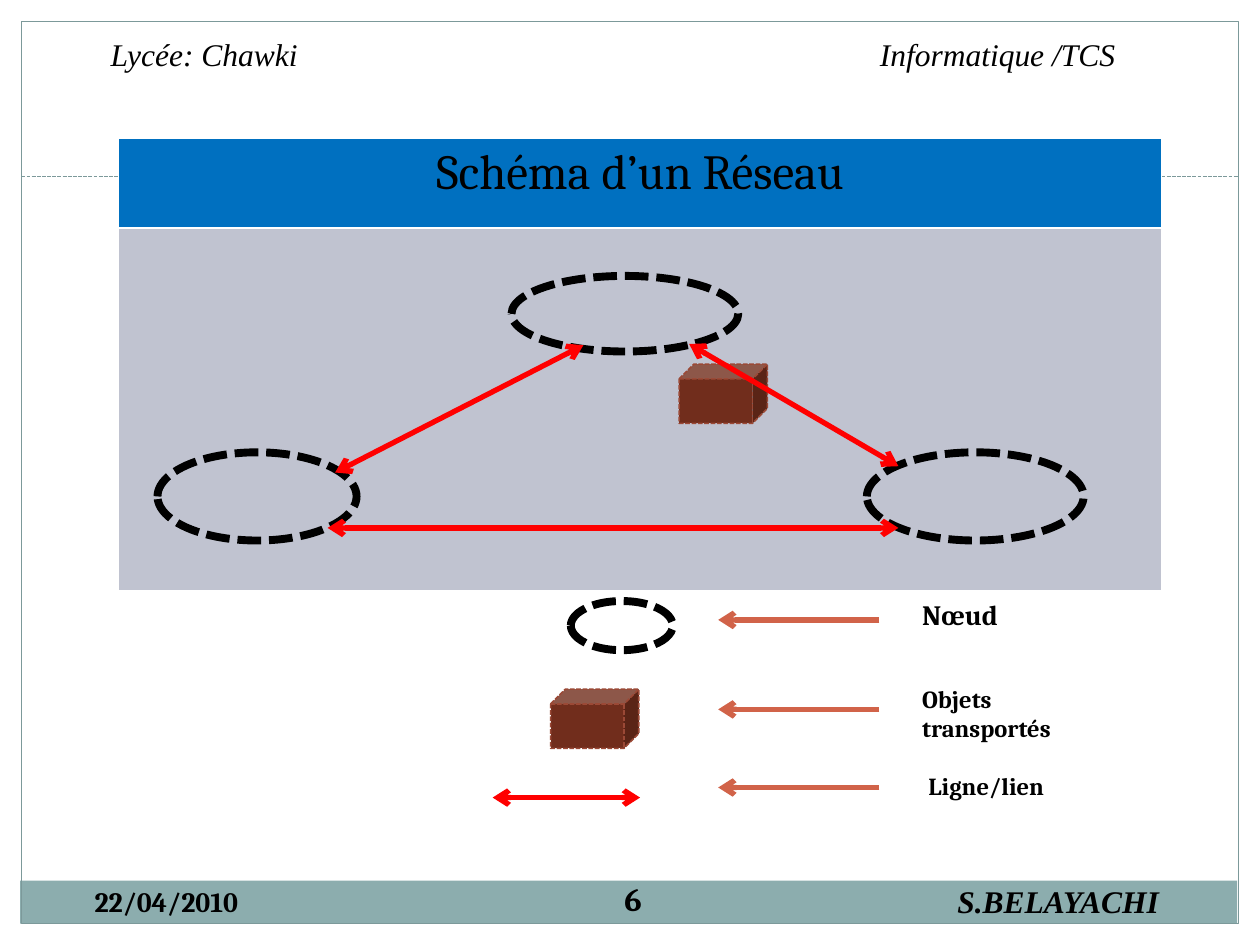
from typing import NamedTuple

from lxml import etree
from pptx import Presentation
from pptx import util as u
from pptx.dml.color import RGBColor
from pptx.enum import dml, shapes, text
from pptx.oxml import ns

BLACK = RGBColor(0x00, 0x00, 0x00)
WHITE = RGBColor(0xFF, 0xFF, 0xFF)
TEAL = RGBColor(0x8C, 0xAD, 0xAE)
TEAL_DARK = RGBColor(0x7C, 0x99, 0x9A)
BLUE = RGBColor(0x00, 0x70, 0xC0)
GREY = RGBColor(0xC0, 0xC3, 0xD0)
BROWN = RGBColor(0x71, 0x2D, 0x1C)
RUST = RGBColor(0x9B, 0x49, 0x36)
RED = RGBColor(0xFF, 0x00, 0x00)
ORANGE = RGBColor(0xD1, 0x63, 0x49)

SERIF = "Cambria"
ROMAN = "Times New Roman"
DASH = dml.MSO_LINE.SQUARE_DOT
LEFT, CENTER, RIGHT = text.PP_ALIGN.LEFT, text.PP_ALIGN.CENTER, text.PP_ALIGN.RIGHT


class Box(NamedTuple):
    left: float
    top: float
    width: float
    height: float

    def lengths(self) -> list:
        return [u.Inches(value) for value in self]


class Label(NamedTuple):
    words: str
    box: Box
    font: dict
    align: text.PP_ALIGN = LEFT


class Link(NamedTuple):
    start: tuple
    end: tuple
    color: RGBColor = RED
    width: float = 3
    arrows: tuple = ("headEnd", "tailEnd")
    dash: dml.MSO_LINE | None = None


def font_format(size: float, name: str = SERIF, bold: bool = True, italic: bool = False) -> dict:
    return {"size": u.Pt(size), "name": name, "bold": bold, "italic": italic}


def write(paragraph, words: str, font: dict, align: text.PP_ALIGN) -> None:
    paragraph.alignment = align
    run = paragraph.add_run()
    run.text = words
    for key, value in font.items():
        setattr(run.font, key, value)
    run.font.color.rgb = BLACK


def add_label(slide, label: Label) -> None:
    frame = slide.shapes.add_textbox(*label.box.lengths()).text_frame
    frame.word_wrap = True
    write(frame.paragraphs[0], label.words, label.font, label.align)


def add_figure(slide, kind, box: Box, fill=None, line=None, width: float = 0.75, dash=None) -> None:
    shape = slide.shapes.add_shape(kind, *box.lengths())
    shape.shadow.inherit = False
    if fill is None:
        shape.fill.background()
    else:
        shape.fill.solid()
        shape.fill.fore_color.rgb = fill
    if line is None:
        shape.line.fill.background()
        return
    shape.line.color.rgb = line
    shape.line.width = u.Pt(width)
    shape.line.dash_style = dash


def add_node(slide, box: Box) -> None:
    kind = shapes.MSO_SHAPE.FLOWCHART_CONNECTOR
    add_figure(slide, kind, box, line=BLACK, width=4.5, dash=DASH)


def add_cube(slide, left: float, top: float) -> None:
    box = Box(left, top, 0.7, 0.47)
    add_figure(slide, shapes.MSO_SHAPE.CUBE, box, BROWN, RUST, 0.9, DASH)


def add_link(slide, link: Link) -> None:
    points = [u.Inches(value) for value in link.start + link.end]
    connector = slide.shapes.add_connector(shapes.MSO_CONNECTOR.STRAIGHT, *points)
    connector.line.color.rgb = link.color
    connector.line.width = u.Pt(link.width)
    connector.line.dash_style = link.dash
    for arrow in link.arrows:
        etree.SubElement(connector.line._get_or_add_ln(), ns.qn(f"a:{arrow}"), type="arrow")
    etree.SubElement(connector._element.spPr, ns.qn("a:effectLst"))


def style_cell(cell, fill: RGBColor) -> None:
    properties = cell._tc.get_or_add_tcPr()
    for side in ("lnL", "lnR", "lnT", "lnB"):
        border = etree.SubElement(properties, ns.qn(f"a:{side}"), w=str(u.Pt(1)))
        solid = etree.SubElement(border, ns.qn("a:solidFill"))
        etree.SubElement(solid, ns.qn("a:srgbClr"), val=str(WHITE))
    cell.fill.solid()
    cell.fill.fore_color.rgb = fill


def add_diagram_table(slide) -> None:
    table = slide.shapes.add_table(2, 1, *Box(0.94, 1.1, 8.28, 3.59).lengths()).table
    for row, height, fill in zip(table.rows, (0.71, 2.88), (BLUE, GREY)):
        row.height = u.Inches(height)
        style_cell(row.cells[0], fill)
    title = table.cell(0, 0).text_frame.paragraphs[0]
    write(title, "Schéma d’un Réseau", font_format(28, bold=False), CENTER)


HEADER_FONT = font_format(18, ROMAN, bold=False, italic=True)
LABELS = [
    # Header
    Label("Lycée: Chawki", Box(0.78, 0.23, 3, 0.4), HEADER_FONT),
    Label("Informatique /TCS", Box(5.95, 0.23, 3, 0.4), HEADER_FONT, RIGHT),
    # Footer
    Label("22/04/2010", Box(0.22, 6.97, 2.2, 0.37), font_format(16), CENTER),
    Label("6", Box(4.61, 6.93, 0.83, 0.4), font_format(18.5), CENTER),
    Label("S.BELAYACHI", Box(7.5, 6.95, 2.27, 0.4), font_format(18, ROMAN, italic=True)),
    # Legend
    Label("Nœud", Box(7.22, 4.69, 1.09, 0.37), font_format(16)),
    Label("Objets transportés", Box(7.22, 5.38, 1.69, 0.57), font_format(14)),
    Label("Ligne/lien", Box(7.27, 6.07, 1.25, 0.34), font_format(14)),
]
NODES = [
    Box(4.06, 2.19, 1.8, 0.6),
    Box(6.88, 3.59, 1.72, 0.7),
    Box(1.25, 3.59, 1.58, 0.7),
    Box(4.53, 4.77, 0.81, 0.39),  # legend
]
CUBES = [(5.39, 2.89), (4.37, 5.47)]
LINKS = [
    Link((5.47, 2.73), (7.13, 3.7)),
    Link((4.63, 2.74), (2.66, 3.75)),
    Link((2.6, 4.19), (7.13, 4.19)),
    Link((3.91, 6.33), (5.08, 6.33)),  # legend
]
LEGEND_ARROWS = [
    Link((6.98, y), (5.7, y), ORANGE, arrows=("tailEnd",)) for y in (4.92, 5.63, 6.25)
]


def main() -> None:
    presentation = Presentation()
    presentation.slide_width, presentation.slide_height = u.Inches(10), u.Inches(7.5)
    slide = presentation.slides.add_slide(presentation.slide_layouts[6])

    # Frame, footer band and title rule
    rectangle = shapes.MSO_SHAPE.RECTANGLE
    add_figure(slide, rectangle, Box(0.16, 6.99, 9.66, 0.34), TEAL)
    add_figure(slide, rectangle, Box(0.17, 0.17, 9.66, 7.16), line=TEAL_DARK)
    add_link(slide, Link((0.17, 1.4), (9.83, 1.4), TEAL_DARK, 0.75, (), DASH))

    # Network diagram and legend
    add_diagram_table(slide)
    for node in NODES:
        add_node(slide, node)
    for left, top in CUBES:
        add_cube(slide, left, top)
    for link in LINKS + LEGEND_ARROWS:
        add_link(slide, link)

    # Texts
    for label in LABELS:
        add_label(slide, label)

    presentation.save("out.pptx")


if __name__ == "__main__":
    main()
